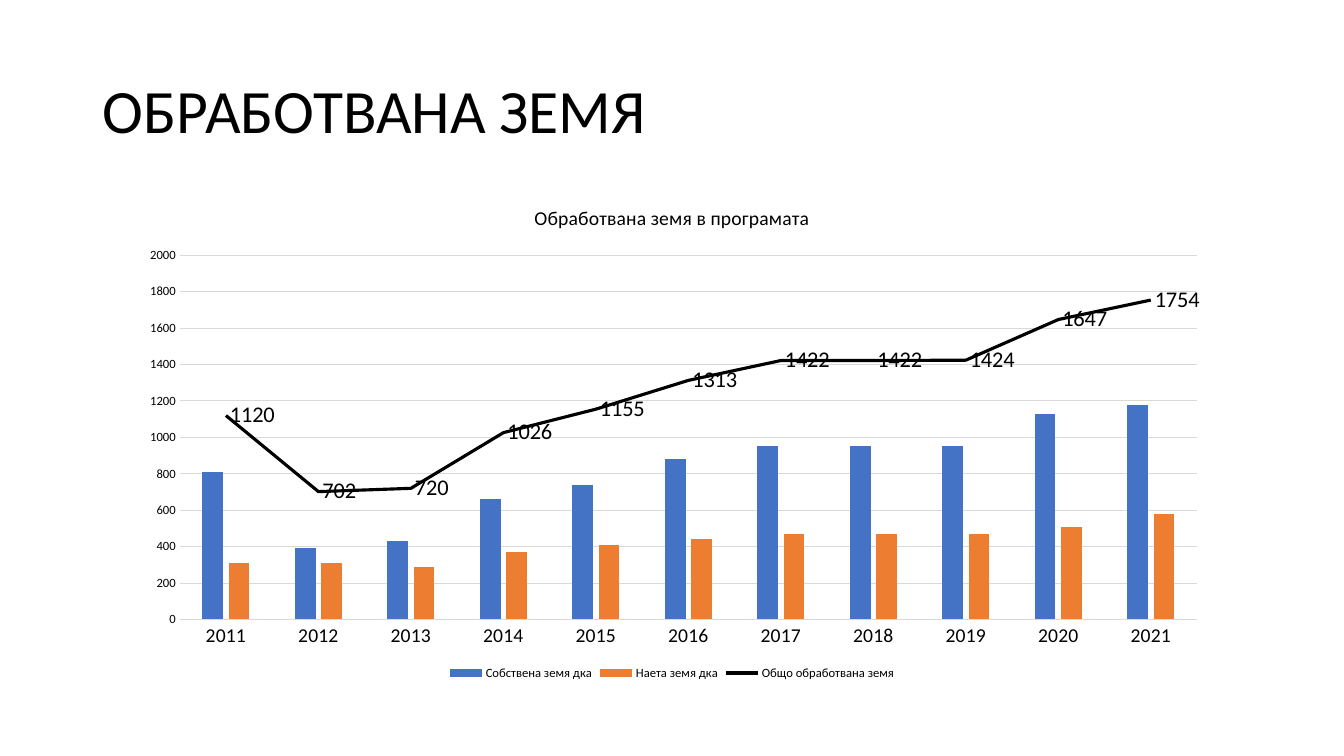
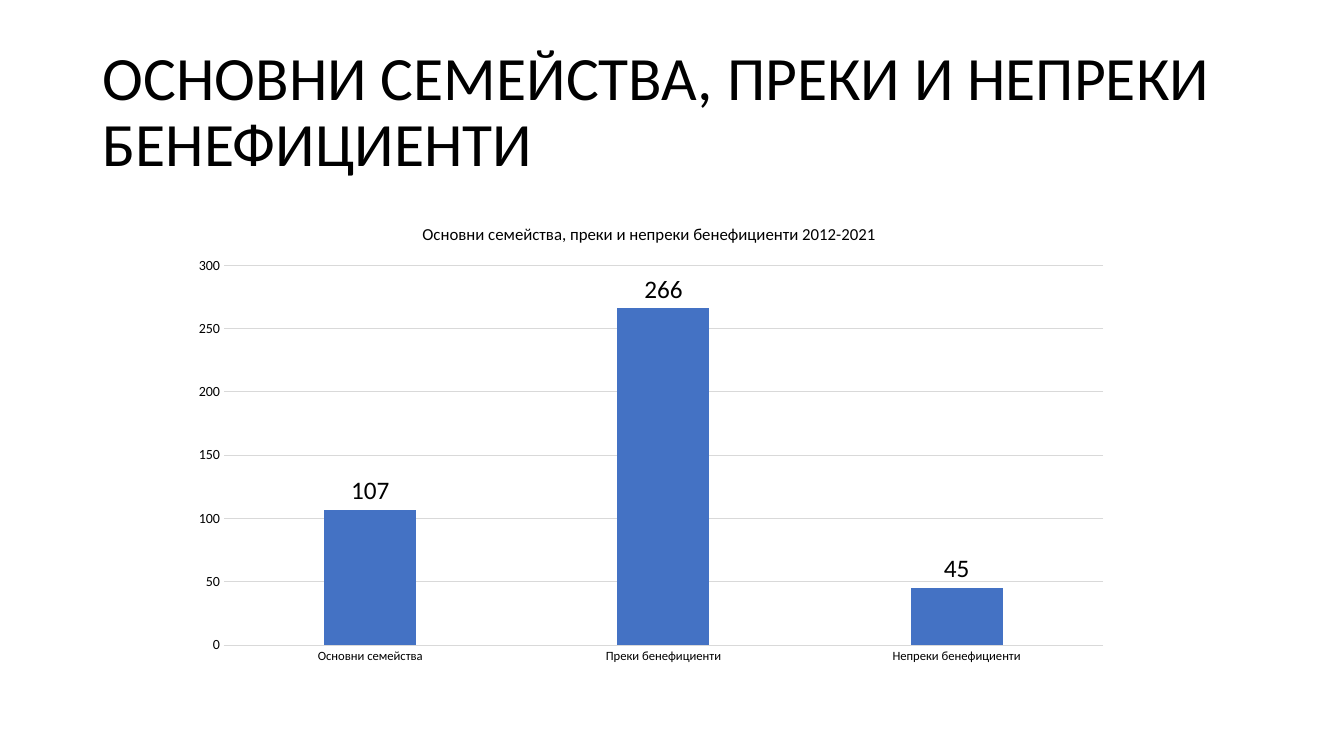
import pptx
import pptx.chart.data
import pptx.dml.color
import pptx.enum.chart
import pptx.enum.text
import pptx.oxml
import pptx.oxml.ns
import pptx.util

PX = 9144
FONT = "Calibri"
COLORS = {"text": "000000", "grid": "D9D9D9", "own": "4472C4",
          "rented": "ED7D31", "total": "000000"}
TITLE_BOX = (92, 40, 1150, 145)
LAND_BOX = (124, 184, 1085, 495)
FAMILY_BOX = (175, 203, 938, 465)


def rgb(name):
    """Return the named palette colour."""
    return pptx.dml.color.RGBColor.from_string(COLORS[name])


def emu(box):
    """Turn a box in px into EMU lengths."""
    return [length * PX for length in box]


def style_font(font, size, color="text"):
    """Give a font the shared face with a size and colour."""
    font.name = FONT
    font.size = pptx.util.Pt(size)
    font.bold = False
    font.color.rgb = rgb(color)


def write_text(frame, text, size, color="text", align=None, spacing=None):
    """Fill a text frame with one formatted paragraph."""
    frame.text = text
    paragraph = frame.paragraphs[0]
    paragraph.alignment = align
    paragraph.line_spacing = spacing
    style_font(paragraph.runs[0].font, size, color)


def titled_slide(deck, heading):
    """Add a title-only slide with its heading in place."""
    slide = deck.slides.add_slide(deck.slide_layouts[5])
    title = slide.shapes.title
    title.left, title.top, title.width, title.height = emu(TITLE_BOX)
    frame = title.text_frame
    write_text(frame, heading, 44, align=pptx.enum.text.PP_ALIGN.LEFT, spacing=0.9)
    frame.word_wrap = True
    frame.auto_size = pptx.enum.text.MSO_AUTO_SIZE.NONE
    frame.vertical_anchor = pptx.enum.text.MSO_ANCHOR.MIDDLE
    return slide


def style_axis(axis, size):
    """Remove tick marks and format the labels of an axis."""
    axis.major_tick_mark = pptx.enum.chart.XL_TICK_MARK.NONE
    axis.minor_tick_mark = pptx.enum.chart.XL_TICK_MARK.NONE
    style_font(axis.tick_labels.font, size)


def style_grid_line(line):
    """Draw a thin grey line."""
    line.color.rgb = rgb("grid")
    line.width = pptx.util.Pt(0.75)


def place_plot(chart, area):
    """Set the inner plot area as fractions of the chart."""
    plot_area = chart._chartSpace.chart.plotArea
    for old in plot_area.findall(pptx.oxml.ns.qn("c:layout")):
        plot_area.remove(old)
    parts = "".join(f'<c:{key} val="{value}"/>' for key, value in zip("xywh", area))
    plot_area.insert(0, pptx.oxml.parse_xml(
        f'<c:layout {pptx.oxml.ns.nsdecls("c")}><c:manualLayout>'
        '<c:layoutTarget val="inner"/><c:xMode val="edge"/><c:yMode val="edge"/>'
        f'{parts}</c:manualLayout></c:layout>'))


def show_values(series, size, position):
    """Label every point of a series with its value."""
    labels = series.data_labels
    labels.show_value = True
    labels.position = position
    style_font(labels.font, size)


def column_chart(slide, box, title, title_size, categories, series, axis_sizes,
                 maximum, step, area):
    """Add a clustered column chart; series holds (name, values, colour)."""
    data = pptx.chart.data.CategoryChartData()
    data.categories = categories
    for name, values, _ in series:
        data.add_series(name, values)
    chart = slide.shapes.add_chart(
        pptx.enum.chart.XL_CHART_TYPE.COLUMN_CLUSTERED, *emu(box), data).chart
    style_font(chart.font, 10)
    chart.has_title = True
    write_text(chart.chart_title.text_frame, title, title_size)
    chart.chart_title.include_in_layout = False
    chart.has_legend = False
    plot = chart.plots[0]
    plot.gap_width, plot.overlap, plot.vary_by_categories = 219, -27, False
    for columns, (_, _, color) in zip(plot.series, series):
        columns.format.fill.solid()
        columns.format.fill.fore_color.rgb = rgb(color)
    style_axis(chart.category_axis, axis_sizes[0])
    style_grid_line(chart.category_axis.format.line)
    scale = chart.value_axis
    style_axis(scale, axis_sizes[1])
    scale.format.line.fill.background()
    scale.minimum_scale, scale.maximum_scale, scale.major_unit = 0, maximum, step
    scale.has_major_gridlines = True
    style_grid_line(scale.major_gridlines.format.line)
    place_plot(chart, area)
    return chart


def last_series_as_line(chart, color, width):
    """Move the last column series to a line plot on the same axes."""
    qn = pptx.oxml.ns.qn
    bars = chart._chartSpace.chart.plotArea.find(qn("c:barChart"))
    total = bars.findall(qn("c:ser"))[-1]
    for tag in ("c:invertIfNegative", "c:spPr"):
        for part in total.findall(qn(tag)):
            total.remove(part)
    axes = "".join(f'<c:axId val="{axis.get("val")}"/>'
                   for axis in bars.findall(qn("c:axId")))
    lines = pptx.oxml.parse_xml(
        f'<c:lineChart {pptx.oxml.ns.nsdecls("c")}><c:grouping val="standard"/>'
        f'<c:varyColors val="0"/><c:marker val="1"/>{axes}</c:lineChart>')
    lines.insert(2, total)
    bars.addnext(lines)
    series = chart.plots[1].series[0]
    series.smooth = False
    series.marker.style = pptx.enum.chart.XL_MARKER_STYLE.NONE
    series.format.line.color.rgb = rgb(color)
    series.format.line.width = pptx.util.Pt(width)
    return series


def land_slide(deck):
    """Build the slide on cultivated land."""
    slide = titled_slide(deck, "ОБРАБОТВАНА ЗЕМЯ")
    chart = column_chart(
        slide, LAND_BOX, "Обработвана земя в програмата", 14,
        [str(year) for year in range(2011, 2022)],
        [("Собствена земя дка",
          (810, 390, 430, 660, 740, 880, 950, 950, 950, 1130, 1180), "own"),
         ("Наета земя дка",
          (310, 310, 290, 370, 410, 440, 470, 470, 470, 510, 580), "rented"),
         ("Общо обработвана земя",
          (1120, 702, 720, 1026, 1155, 1313, 1422, 1422, 1424, 1647, 1754), "total")],
        (14, 9), 2000, 200, (0.05, 0.14, 0.93, 0.73))
    total = last_series_as_line(chart, "total", 2.25)
    show_values(total, 16, pptx.enum.chart.XL_LABEL_POSITION.RIGHT)
    chart.has_legend = True
    chart.legend.position = pptx.enum.chart.XL_LEGEND_POSITION.BOTTOM
    chart.legend.include_in_layout = False
    style_font(chart.legend.font, 9)


def family_slide(deck):
    """Build the slide on families and beneficiaries."""
    slide = titled_slide(deck, "ОСНОВНИ СЕМЕЙСТВА, ПРЕКИ И НЕПРЕКИ БЕНЕФИЦИЕНТИ")
    chart = column_chart(
        slide, FAMILY_BOX,
        "Основни семейства, преки и непреки бенефициенти 2012-2021", 12,
        ["Основни семейства", "Преки бенефициенти", "Непреки бенефициенти"],
        [("Series 1", (107, 266, 45), "own")],
        (9, 10), 300, 50, (0.05, 0.13, 0.93, 0.81))
    show_values(chart.plots[0].series[0], 18,
                pptx.enum.chart.XL_LABEL_POSITION.OUTSIDE_END)


def main():
    """Build and save the deck."""
    deck = pptx.Presentation()
    deck.slide_width, deck.slide_height = emu((1333, 750))
    land_slide(deck)
    family_slide(deck)
    deck.save("out.pptx")


if __name__ == "__main__":
    main()
